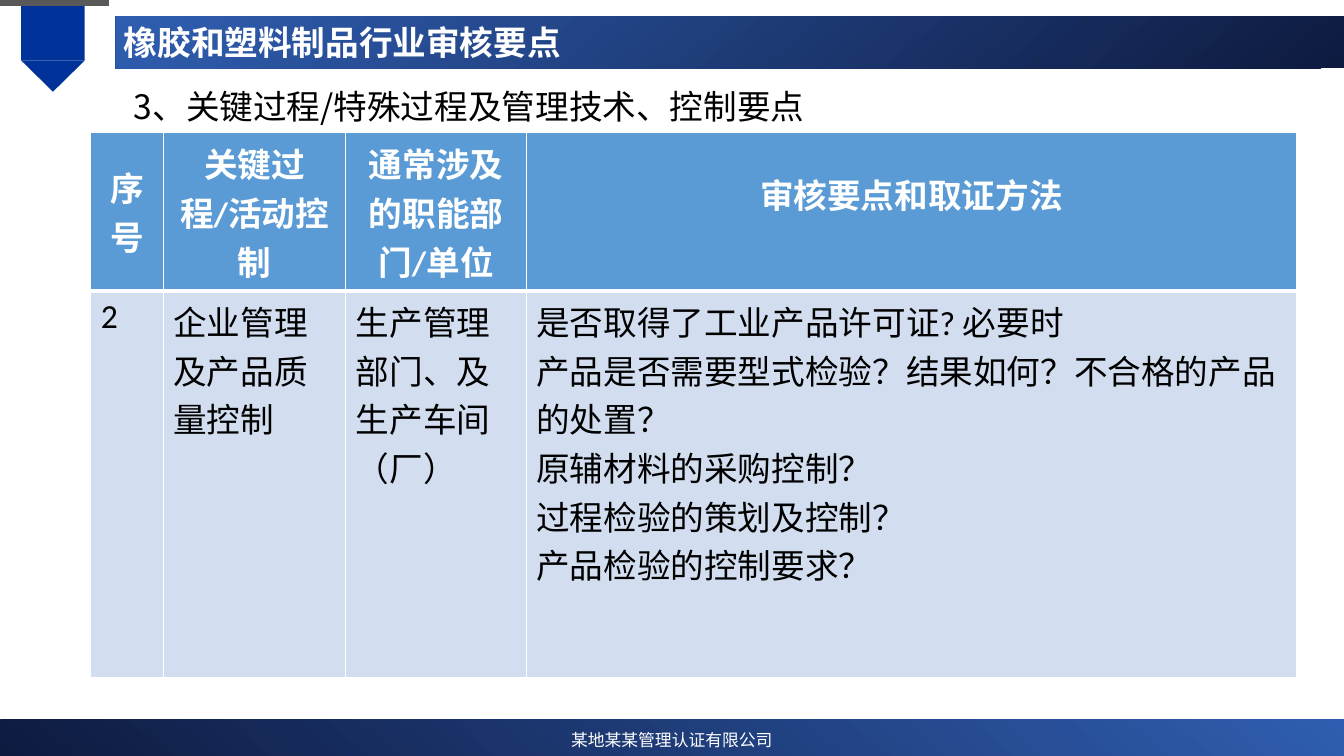
"""Build the audit key points slide for the rubber and plastic products industry."""
from lxml.etree import SubElement
from pptx import Presentation
from pptx.dml.color import RGBColor
from pptx.enum.shapes import MSO_SHAPE
from pptx.enum.text import MSO_ANCHOR, PP_ALIGN
from pptx.oxml import parse_xml
from pptx.oxml.ns import nsdecls, qn
from pptx.util import Inches, Pt

TITLE = "橡胶和塑料制品行业审核要点"
SUBTITLE = "3、关键过程/特殊过程及管理技术、控制要点"
COMPANY = "某地某某管理认证有限公司"
AUDIT_ROWS = [
    ["序号", "关键过程/活动控制", "通常涉及的职能部门/单位", "审核要点和取证方法"],
    ["2", "企业管理及产品质量控制", "生产管理部门、及生产车间（厂）",
     "是否取得了工业产品许可证? 必要时\n"
     "产品是否需要型式检验？结果如何？不合格的产品的处置？\n"
     "原辅材料的采购控制？\n过程检验的策划及控制？\n产品检验的控制要求？"],
]
COLUMN_WIDTHS = [0.72, 1.81, 1.79, 7.64]
ROW_HEIGHTS = [1.58, 3.83]
COLORS = {"navy": "0E1A40", "blue": "2F5EB0", "ribbon": "003399", "gray": "595959",
          "white": "FFFFFF", "black": "000000", "header": "5B9BD5", "body": "D2DEEF"}
CJK, LATIN = "Noto Sans CJK SC", "Calibri"
WIDTH, HEIGHT = 13.33, 7.5
RIBBON_LEFT, RIBBON_WIDTH, RIBBON_HEIGHT = 0.21, 0.63, 0.6
BANNER_LEFT, BANNER_TOP = 1.15, 0.16


def rgb(name):
    return RGBColor.from_string(COLORS[name])


def write(frame, text, size, color, latin=CJK, bold=False, align=PP_ALIGN.LEFT):
    frame.text = text
    frame.word_wrap = True
    for paragraph in frame.paragraphs:
        paragraph.alignment = align
        for run in paragraph.runs:
            run.font.size, run.font.bold, run.font.name = Pt(size), bold, latin
            run.font.color.rgb = rgb(color)
            SubElement(run.font._element, qn("a:ea")).set("typeface", CJK)


def add_block(slide, box, color=None, kind=MSO_SHAPE.RECTANGLE):
    block = slide.shapes.add_shape(kind, *map(Inches, box))
    block.shadow.inherit = False
    block.line.fill.background()
    if color:
        block.fill.solid()
        block.fill.fore_color.rgb = rgb(color)
    else:
        block.fill.gradient()
        block.fill.gradient_angle = 130
        for stop, name, place in zip(block.fill.gradient_stops, ("navy", "blue"), (0, 1)):
            stop.color.rgb, stop.position = rgb(name), place
    return block


def add_words(slide, box, text, **style):
    frame = slide.shapes.add_textbox(*map(Inches, box)).text_frame
    write(frame, text, 24, **style)
    return frame


def add_borders(cell, bottom):
    properties = cell._tc.get_or_add_tcPr()
    for index, (side, points) in enumerate(zip("LRTB", (1, 1, 1, bottom))):
        properties.insert(index, parse_xml(
            f'<a:ln{side} {nsdecls("a")} w="{Pt(points)}"><a:solidFill>'
            f'<a:srgbClr val="{COLORS["white"]}"/></a:solidFill></a:ln{side}>'))


def add_audit_table(slide):
    table = slide.shapes.add_table(
        len(ROW_HEIGHTS), len(COLUMN_WIDTHS), Inches(0.9), Inches(1.31),
        Inches(sum(COLUMN_WIDTHS)), Inches(sum(ROW_HEIGHTS))).table
    for column, width in zip(table.columns, COLUMN_WIDTHS):
        column.width = Inches(width)
    for r, (row, height) in enumerate(zip(table.rows, ROW_HEIGHTS)):
        row.height = Inches(height)
        heading = r == 0
        for cell, text in zip(row.cells, AUDIT_ROWS[r]):
            write(cell.text_frame, text, 24, "white" if heading else "black", LATIN,
                  heading, PP_ALIGN.CENTER if heading else PP_ALIGN.LEFT)
            cell.vertical_anchor = MSO_ANCHOR.MIDDLE if heading else MSO_ANCHOR.TOP
            cell.fill.solid()
            cell.fill.fore_color.rgb = rgb("header" if heading else "body")
            add_borders(cell, 3 if heading else 1)
    table.cell(0, len(COLUMN_WIDTHS) - 1).margin_bottom = Inches(0.41)


def main():
    deck = Presentation()
    deck.slide_width, deck.slide_height = Inches(WIDTH), Inches(HEIGHT)
    slide = deck.slides.add_slide(deck.slide_layouts[6])

    footer = add_block(slide, (0, 7.14, WIDTH, 0.39))
    footer._element.spPr.xfrm.set("flipH", "1")
    write(footer.text_frame, COMPANY, 12, "white", align=PP_ALIGN.CENTER)
    footer.text_frame.vertical_anchor = MSO_ANCHOR.MIDDLE

    add_block(slide, (RIBBON_LEFT, 0, RIBBON_WIDTH, RIBBON_HEIGHT), "ribbon")
    ribbon_tip = add_block(slide, (RIBBON_LEFT, RIBBON_HEIGHT, RIBBON_WIDTH, 0.31),
                           "ribbon", MSO_SHAPE.ISOSCELES_TRIANGLE)
    ribbon_tip.rotation = 180
    add_block(slide, (0, 0, 1.08, 0.06), "gray")
    add_block(slide, (BANNER_LEFT, BANNER_TOP, WIDTH - BANNER_LEFT, 0.52))

    title = add_words(slide, (1.13, BANNER_TOP, 11.5, 0.56), TITLE, color="white", bold=True)
    title.vertical_anchor = MSO_ANCHOR.MIDDLE
    title.paragraphs[0].line_spacing = 0.9
    subtitle = add_words(slide, (1.23, 0.68, 11.36, 5.89), SUBTITLE, color="black").paragraphs[0]
    subtitle.line_spacing = 1.3
    subtitle.space_before = subtitle.space_after = Pt(6)

    add_audit_table(slide)
    deck.save("out.pptx")


if __name__ == "__main__":
    main()
